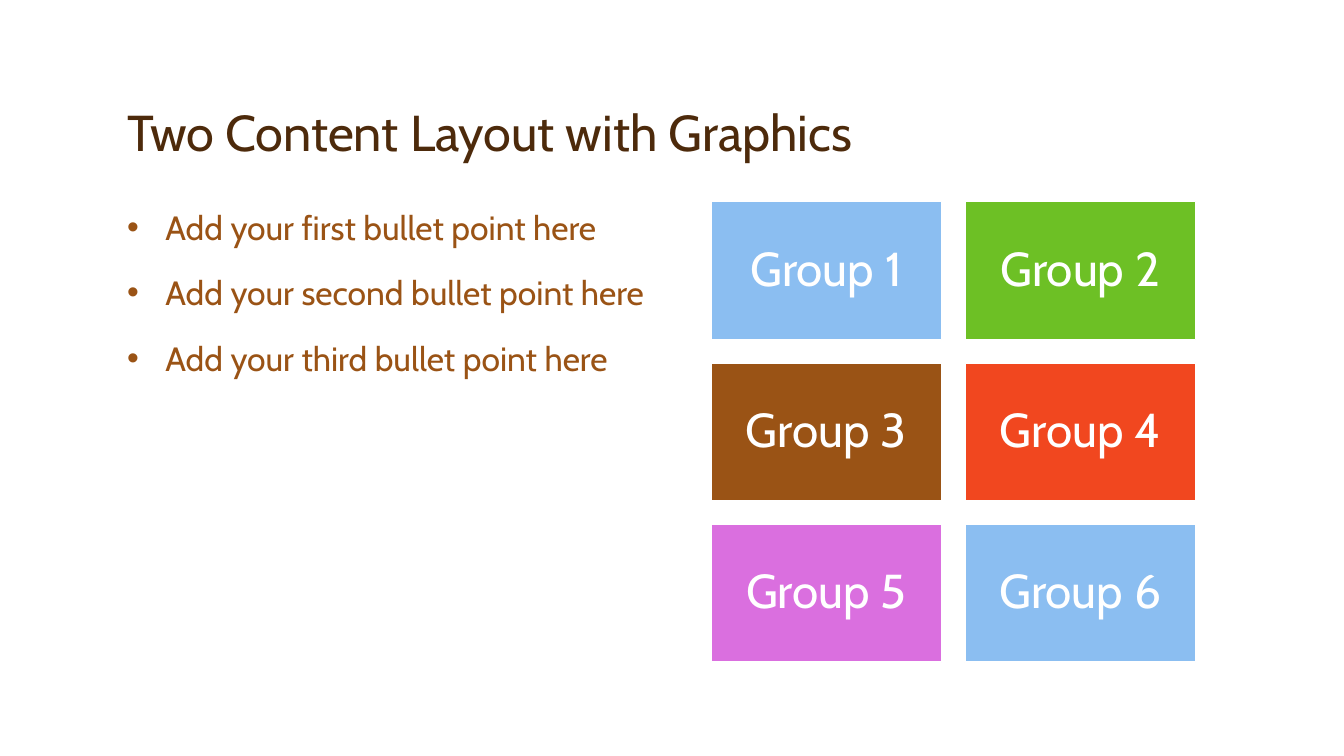
from pptx import Presentation
from pptx import util as u
from pptx.dml import color
from pptx.enum import shapes, text
from pptx.oxml import parse_xml
from pptx.oxml.ns import nsdecls

PX = 9144  # 100 px to the inch
FONT = "Cabin"
DARK_BROWN, BROWN, WHITE = "4D2A0B", "9A5315", "FFFFFF"
BLUE, GREEN, RED, PINK = "8BBEF1", "6DC025", "F1471F", "DA6FDF"

BULLETS = [
    "Add your first bullet point here",
    "Add your second bullet point here",
    "Add your third bullet point here",
]
GROUP_COLOURS = [BLUE, GREEN, BROWN, RED, PINK, BLUE]


def px(length):
    return u.Emu(round(length * PX))


def rgb(value):
    return color.RGBColor.from_string(value)


def place(shape, box):
    shape.left, shape.top, shape.width, shape.height = map(px, box)


def style(paragraph, size, colour, alignment, spacing):
    paragraph.alignment = alignment
    paragraph.line_spacing = spacing
    for run in paragraph.runs:
        run.font.name = FONT
        run.font.size = u.Pt(size)
        run.font.color.rgb = rgb(colour)


def add_title(slide, box, words):
    title = slide.shapes.title
    place(title, box)
    frame = title.text_frame
    frame.text = words
    frame.auto_size = text.MSO_AUTO_SIZE.NONE
    frame.vertical_anchor = text.MSO_ANCHOR.BOTTOM
    style(frame.paragraphs[0], 36, DARK_BROWN, text.PP_ALIGN.LEFT, 0.9)


def add_bullets(slide, box, lines):
    body = slide.placeholders[1]
    place(body, box)
    frame = body.text_frame
    frame.text = "\n".join(lines)
    frame.auto_size = text.MSO_AUTO_SIZE.NONE
    for number, paragraph in enumerate(frame.paragraphs):
        properties = paragraph._p.get_or_add_pPr()
        properties.set("marL", str(px(38)))
        properties.set("indent", str(-px(38)))
        properties.append(parse_xml(f'<a:buFont {nsdecls("a")} typeface="Arial"/>'))
        properties.append(parse_xml(f'<a:buChar {nsdecls("a")} char="•"/>'))
        paragraph.space_before = u.Pt(18 if number else 0)
        style(paragraph, 24, BROWN, text.PP_ALIGN.LEFT, 1.0)


def add_group_grid(slide, box, colours, columns=2, gap=23):
    left, top, width, height = box
    rows = len(colours) // columns
    tile_width = (width - gap * (columns - 1)) / columns
    tile_height = (height - gap * (rows - 1)) / rows
    for number, colour in enumerate(colours):
        row, column = divmod(number, columns)
        tile = slide.shapes.add_shape(
            shapes.MSO_SHAPE.RECTANGLE,
            px(left + column * (tile_width + gap)),
            px(top + row * (tile_height + gap)),
            px(tile_width), px(tile_height))
        tile.shadow.inherit = False
        tile.fill.solid()
        tile.fill.fore_color.rgb = rgb(colour)
        tile.line.color.rgb = rgb(WHITE)
        tile.line.width = u.Pt(1)
        frame = tile.text_frame
        frame.text = f"Group {number + 1}"
        frame.word_wrap = True
        frame.vertical_anchor = text.MSO_ANCHOR.MIDDLE
        frame.margin_left = frame.margin_right = px(14)
        frame.margin_top = frame.margin_bottom = px(14)
        style(frame.paragraphs[0], 34, WHITE, text.PP_ALIGN.CENTER, 0.9)


def main():
    presentation = Presentation()
    presentation.slide_width, presentation.slide_height = px(1333), px(750)
    slide = presentation.slides.add_slide(presentation.slide_layouts[1])
    slide.background.fill.solid()
    slide.background.fill.fore_color.rgb = rgb(WHITE)

    # Heading, list on the left, tiles on the right
    add_title(slide, (116, 33, 1100, 133), "Two Content Layout with Graphics")
    add_bullets(slide, (116, 200, 542, 458), BULLETS)
    add_group_grid(slide, (705, 200, 481, 457), GROUP_COLOURS)

    presentation.save("out.pptx")


if __name__ == "__main__":
    main()
